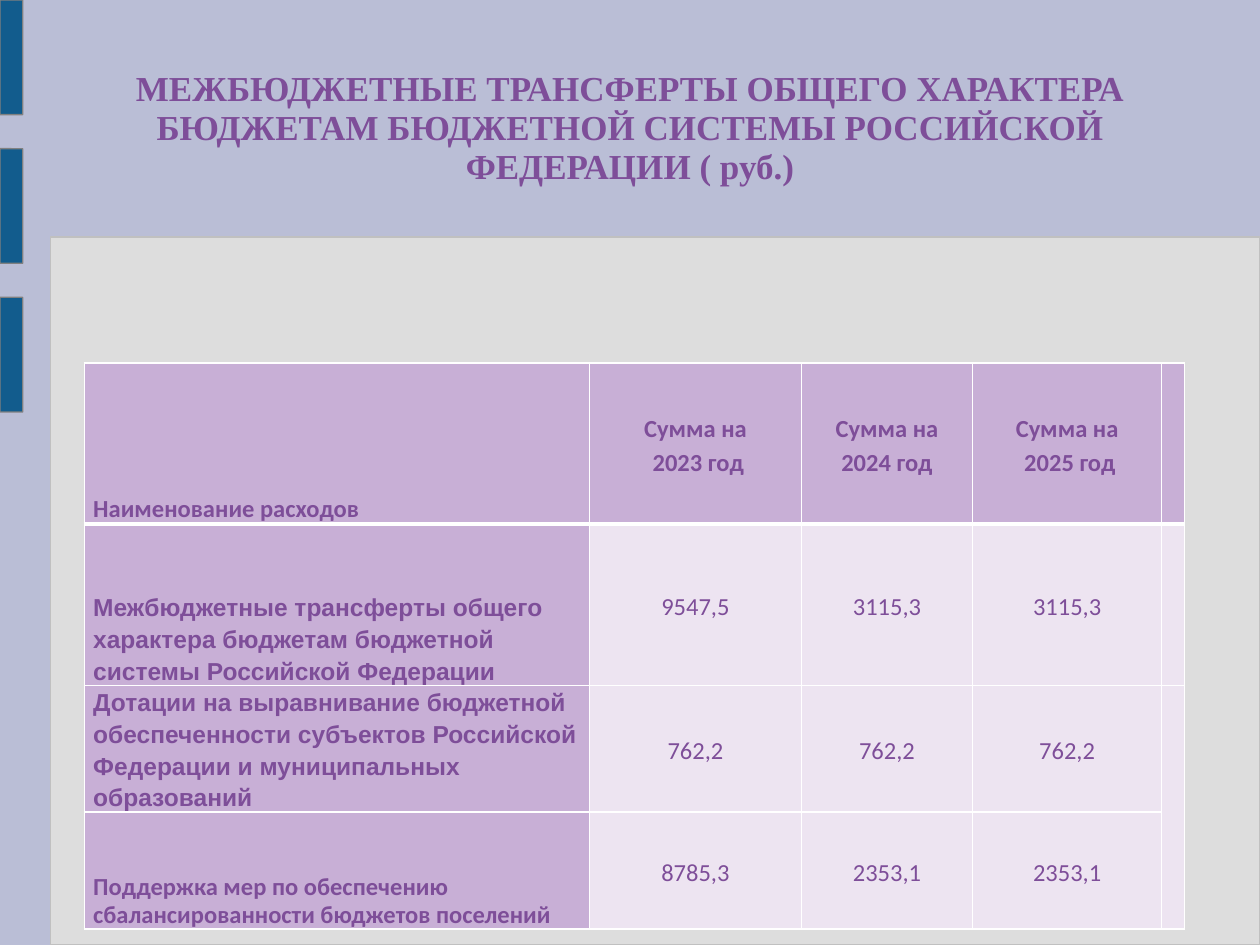
from lxml.etree import SubElement
from pptx import Presentation
from pptx.dml.color import RGBColor
from pptx.enum.shapes import MSO_SHAPE
from pptx.enum.text import MSO_ANCHOR, PP_ALIGN
from pptx.oxml.ns import qn
from pptx.util import Inches, Pt

COLORS = {
    "background": "BABED6",
    "panel": "DDDDDD",
    "panel line": "C0C0C0",
    "bar": "125C8D",
    "bar line": "808080",
    "text": "7E4E99",
    "heading cell": "C8AFD6",
    "value cell": "EDE4F1",
    "border": "FFFFFF",
}

deck = Presentation()
deck.slide_width, deck.slide_height = Inches(10), Inches(7.5)
page = deck.slides.add_slide(deck.slide_layouts[6])
page.background.fill.solid()
page.background.fill.fore_color.rgb = RGBColor.from_string(COLORS["background"])

# Grid of 100 columns by 75 rows
UNIT = deck.slide_width // 100


def grid(*steps):
    return [round(step * UNIT) for step in steps]


def write(para, text, font, size, bold, align, spacing):
    para.alignment = align
    para.line_spacing = spacing
    span = para.add_run()
    span.text = text
    span.font.name = font
    span.font.size = Pt(size)
    span.font.bold = bold
    span.font.color.rgb = RGBColor.from_string(COLORS["text"])


# Panel and side bars
blocks = [("panel", 4, 18.8, 96, 56.2, 0)]
blocks += [("bar", 0, 11.8 * step, 1.8, 9.1, 0.01) for step in range(3)]
for name, left, top, width, height, rounding in blocks:
    block = page.shapes.add_shape(
        MSO_SHAPE.ROUNDED_RECTANGLE, *grid(left, top, width, height))
    block.adjustments[0] = rounding
    block.shadow.inherit = False
    block.fill.solid()
    block.fill.fore_color.rgb = RGBColor.from_string(COLORS[name])
    block.line.color.rgb = RGBColor.from_string(COLORS[name + " line"])
    block.line.width = Pt(0.75)

# Table: each cell holds its paragraphs
rows = [
    [["Наименование расходов"], ["Сумма на", " 2023 год"],
     ["Сумма на 2024 год"], ["Сумма на", " 2025 год"], []],
    [["Межбюджетные трансферты общего характера бюджетам бюджетной "
      "системы Российской Федерации"], ["9547,5"], ["3115,3"], ["3115,3"], []],
    [["Дотации на выравнивание бюджетной обеспеченности субъектов "
      "Российской Федерации и муниципальных образований"],
     ["762,2"], ["762,2"], ["762,2"], []],
    [["Поддержка мер по обеспечению сбалансированности бюджетов поселений"],
     ["8785,3"], ["2353,1"], ["2353,1"], []],
]
column_widths = grid(40.1, 16.8, 13.6, 15, 1.8)
row_heights = grid(12.8, 12.8, 9.3, 9.3)
table = page.shapes.add_table(
    len(rows), len(column_widths), *grid(6.7, 28.8, 87.4, 45.7)).table
for column, width in zip(table.columns, column_widths):
    column.width = width
for row, height in zip(table.rows, row_heights):
    row.height = height

for r, row in enumerate(rows):
    for c, paragraphs in enumerate(row):
        cell = table.cell(r, c)
        heading = r == 0 or c == 0
        cell.margin_left = cell.margin_right = Inches(0.07)
        cell.margin_top = cell.margin_bottom = 0
        cell.vertical_anchor = MSO_ANCHOR.BOTTOM if c == 0 else MSO_ANCHOR.MIDDLE

        # White borders, thicker between header and body
        for side in "LRTB":
            thick = (r, side) in [(0, "B"), (1, "T")]
            line = SubElement(cell._tc.get_or_add_tcPr(), qn("a:ln" + side),
                              w=str(Pt(3 if thick else 1)))
            SubElement(SubElement(line, qn("a:solidFill")), qn("a:srgbClr"),
                       val=COLORS["border"])
        cell.fill.solid()
        cell.fill.fore_color.rgb = RGBColor.from_string(
            COLORS["heading cell" if heading else "value cell"])

        frame = cell.text_frame
        for index, text in enumerate(paragraphs):
            para = frame.add_paragraph() if index else frame.paragraphs[0]
            write(para, text,
                  font="Arial" if c == 0 and r in (1, 2) else "Calibri",
                  size=14, bold=heading,
                  align=PP_ALIGN.LEFT if c == 0 else PP_ALIGN.CENTER,
                  spacing=0.93 if (r, c) == (3, 0) else 1.15)
table.cell(2, 4).merge(table.cell(3, 4))

# Title, lifted by its bottom margin
box = page.shapes.add_textbox(*grid(7.3, 5.5, 85.4, 12.5))
frame = box.text_frame
frame.word_wrap = True
frame.vertical_anchor = MSO_ANCHOR.MIDDLE
frame.margin_left = frame.margin_right = frame.margin_top = 0
frame.margin_bottom = Inches(0.31)
write(frame.paragraphs[0],
      "МЕЖБЮДЖЕТНЫЕ ТРАНСФЕРТЫ ОБЩЕГО ХАРАКТЕРА БЮДЖЕТАМ БЮДЖЕТНОЙ "
      "СИСТЕМЫ РОССИЙСКОЙ ФЕДЕРАЦИИ ( руб.)",
      font="Times New Roman", size=20, bold=True,
      align=PP_ALIGN.CENTER, spacing=0.93)

deck.save("out.pptx")
